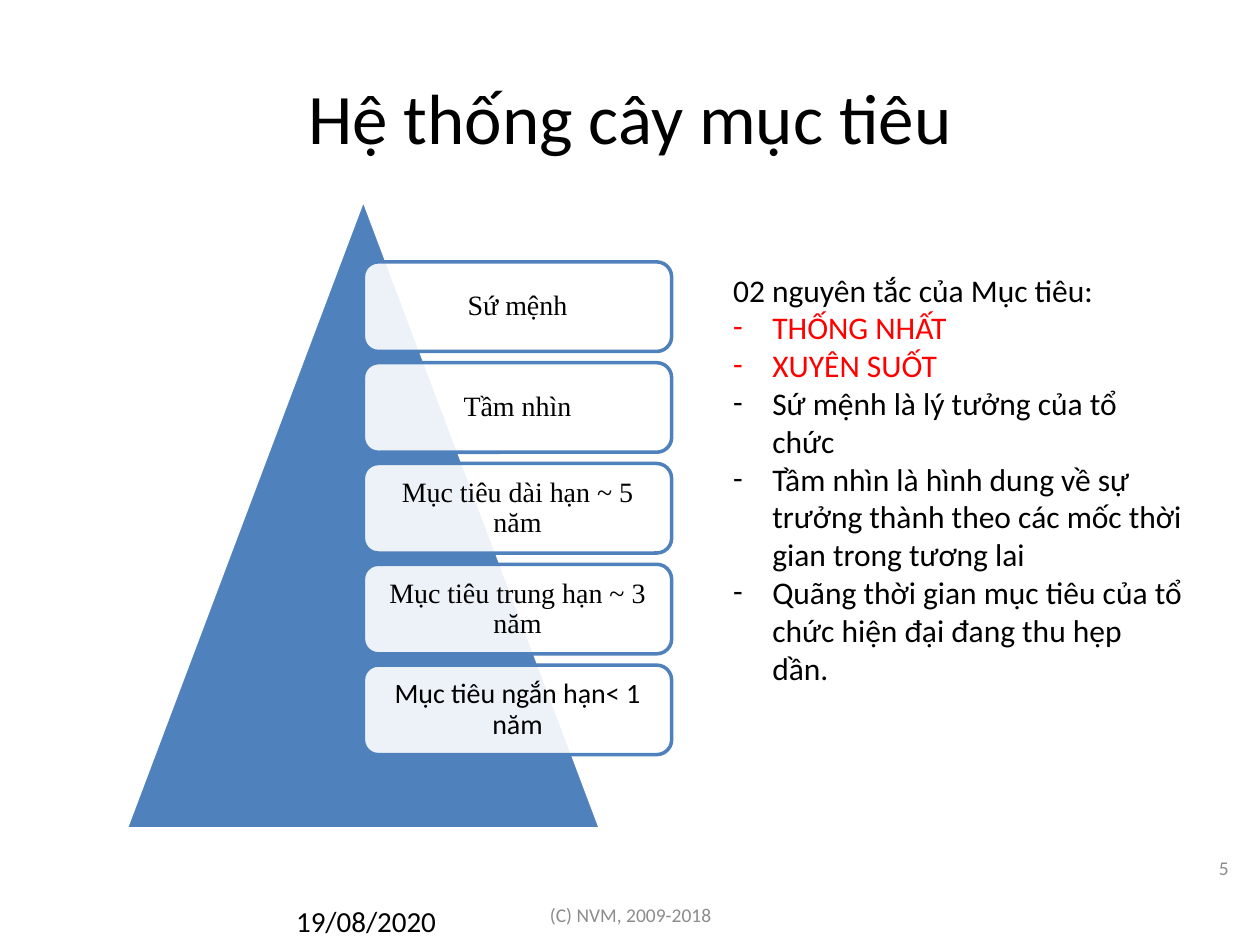
from lxml import etree
from pptx import Presentation
from pptx import util as u
from pptx.dml.color import RGBColor
from pptx.enum import shapes, text
from pptx.oxml.ns import qn

BLUE, BLACK, RED, GREY, WHITE = "4F81BD", "000000", "FF0000", "8C8C8C", "FFFFFF"
SANS, SERIF = "Calibri", "Times New Roman"
LEFT, CENTER, RIGHT = text.PP_ALIGN.LEFT, text.PP_ALIGN.CENTER, text.PP_ALIGN.RIGHT
TOP, MIDDLE = text.MSO_ANCHOR.TOP, text.MSO_ANCHOR.MIDDLE

GOALS = [
    ("Sứ mệnh", SERIF),
    ("Tầm nhìn", SERIF),
    ("Mục tiêu dài hạn ~ 5 năm", SERIF),
    ("Mục tiêu trung hạn ~ 3 năm", SERIF),
    ("Mục tiêu ngắn hạn< 1 năm", SANS),
]
PRINCIPLES = [
    ("THỐNG NHẤT", RED),
    ("XUYÊN SUỐT", RED),
    ("Sứ mệnh là lý tưởng của tổ chức", BLACK),
    ("Tầm nhìn là hình dung về sự trưởng thành theo các mốc thời gian trong tương lai", BLACK),
    ("Quãng thời gian mục tiêu của tổ chức hiện đại đang thu hẹp dần.", BLACK),
]


def rgb(value):
    """Turn a hex string into a colour."""
    return RGBColor.from_string(value)


def style(para, size, color=BLACK, font=SANS, align=LEFT):
    """Format a paragraph and its runs."""
    para.alignment = align
    for span in para.runs:
        span.font.size = u.Pt(size)
        span.font.name = font
        span.font.color.rgb = rgb(color)


def add_text(page, box, words, size, color=BLACK, align=LEFT, anchor=TOP):
    """Add a wrapped one-paragraph text box and return its frame."""
    frame = page.shapes.add_textbox(*map(u.Cm, box)).text_frame
    frame.word_wrap = True
    frame.vertical_anchor = anchor
    frame.text = words
    style(frame.paragraphs[0], size, color, align=align)
    return frame


def add_outlined(page, kind, box, fill, line):
    """Add a flat preset shape with a two-point outline."""
    shape = page.shapes.add_shape(kind, *map(u.Cm, box))
    shape.shadow.inherit = False
    shape.fill.solid()
    shape.fill.fore_color.rgb = rgb(fill)
    shape.line.color.rgb = rgb(line)
    shape.line.width = u.Pt(2)
    return shape


def add_card(page, box, words, font):
    """Add one translucent goal card."""
    card = add_outlined(page, shapes.MSO_SHAPE.ROUNDED_RECTANGLE, box, WHITE, BLUE)
    color = card.fill._xPr.find(qn("a:solidFill"))[0]
    etree.SubElement(color, qn("a:alpha")).set("val", "90000")
    frame = card.text_frame
    frame.word_wrap = True
    frame.vertical_anchor = MIDDLE
    frame.margin_left = frame.margin_right = u.Cm(0.18)
    frame.margin_top = frame.margin_bottom = u.Cm(0.18)
    frame.text = words
    para = frame.paragraphs[0]
    para.line_spacing = 0.9
    style(para, 16, font=font, align=CENTER)


def add_pyramid(page, left, top, width, height):
    """Add the triangle with goal cards hanging from its centre line."""
    base = width * 0.87
    add_outlined(page, shapes.MSO_SHAPE.ISOSCELES_TRIANGLE,
                 (left, top, base, height), BLUE, WHITE)
    card_left = left + base / 2
    card_width = left + width - card_left
    pitch = height * 0.16
    for row, (words, font) in enumerate(GOALS):
        card_top = top + height / 10 + row * pitch
        add_card(page, (card_left, card_top, card_width, pitch * 8 / 9), words, font)


def add_principles(page, *box):
    """Add the heading and the dashed list of principles."""
    frame = add_text(page, box, "02 nguyên tắc của Mục tiêu:", 18)
    for words, color in PRINCIPLES:
        para = frame.add_paragraph()
        para.text = words
        properties = para._p.get_or_add_pPr()
        properties.set("marL", str(u.Cm(0.79)))
        properties.set("indent", str(-u.Cm(0.79)))
        etree.SubElement(properties, qn("a:buFont")).set("typeface", SANS)
        etree.SubElement(properties, qn("a:buChar")).set("char", "-")
        style(para, 18, color)


def add_footer(page, left, top, width, height):
    """Add the date, the copyright line and the page number."""
    add_text(page, (left, top + 1.09, 5.92, height), "19/08/2020", 16.6)
    add_text(page, (left + 2.97, top + 0.94, 8.05, height),
             "(C) NVM, 2009-2018", 11.1, GREY, CENTER, MIDDLE)
    add_text(page, (left + width - 5.92, top, 5.92, height),
             "5", 11.1, GREY, RIGHT, MIDDLE)


def main():
    """Build the slide and save it."""
    deck = Presentation()
    deck.slide_width, deck.slide_height = u.Cm(25.4), u.Cm(19.05)
    page = deck.slides.add_slide(deck.slide_layouts[6])
    add_text(page, (1.27, 0.76, 22.86, 3.18), "Hệ thống cây mục tiêu",
             40.6, align=CENTER, anchor=MIDDLE)
    add_footer(page, 5.72, 16.99, 19.3, 1.02)
    add_pyramid(page, 2.54, 4.01, 11, 12.7)
    add_principles(page, 14.53, 5.33, 9.6, 8.71)
    deck.save("out.pptx")


if __name__ == "__main__":
    main()
